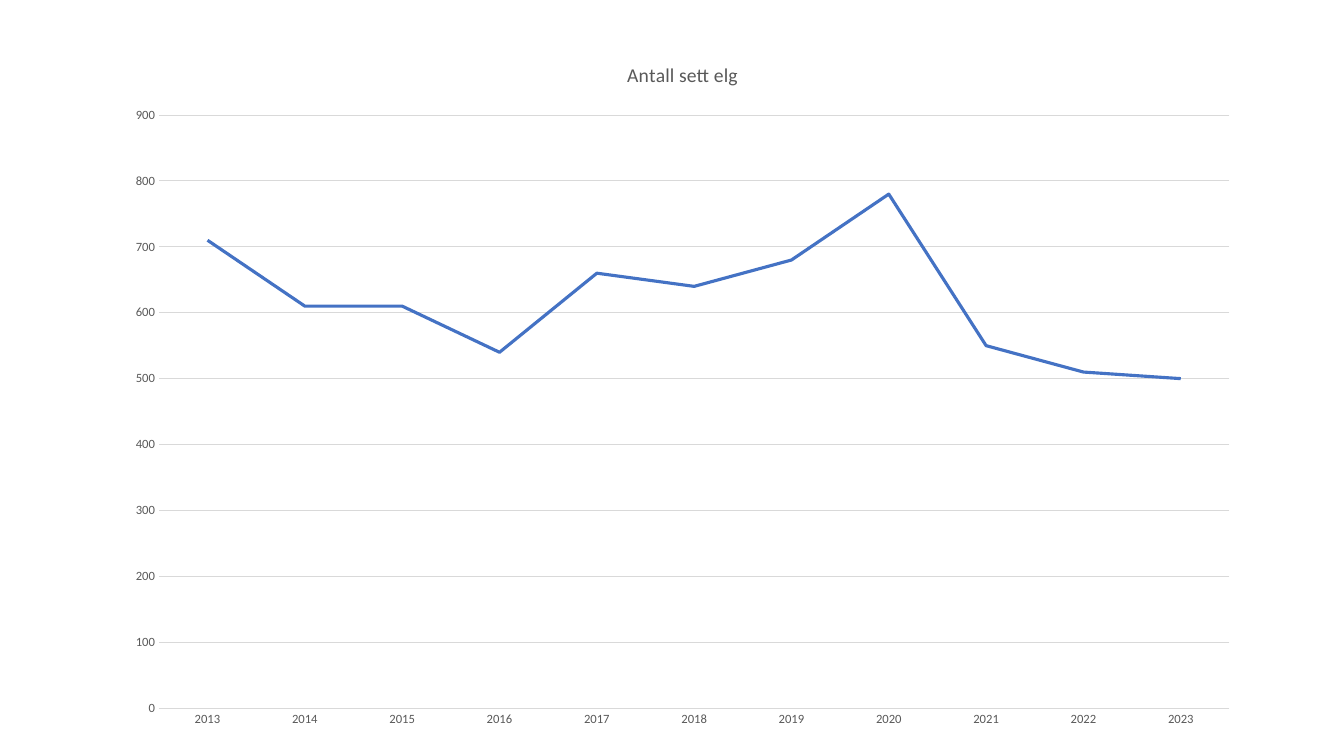
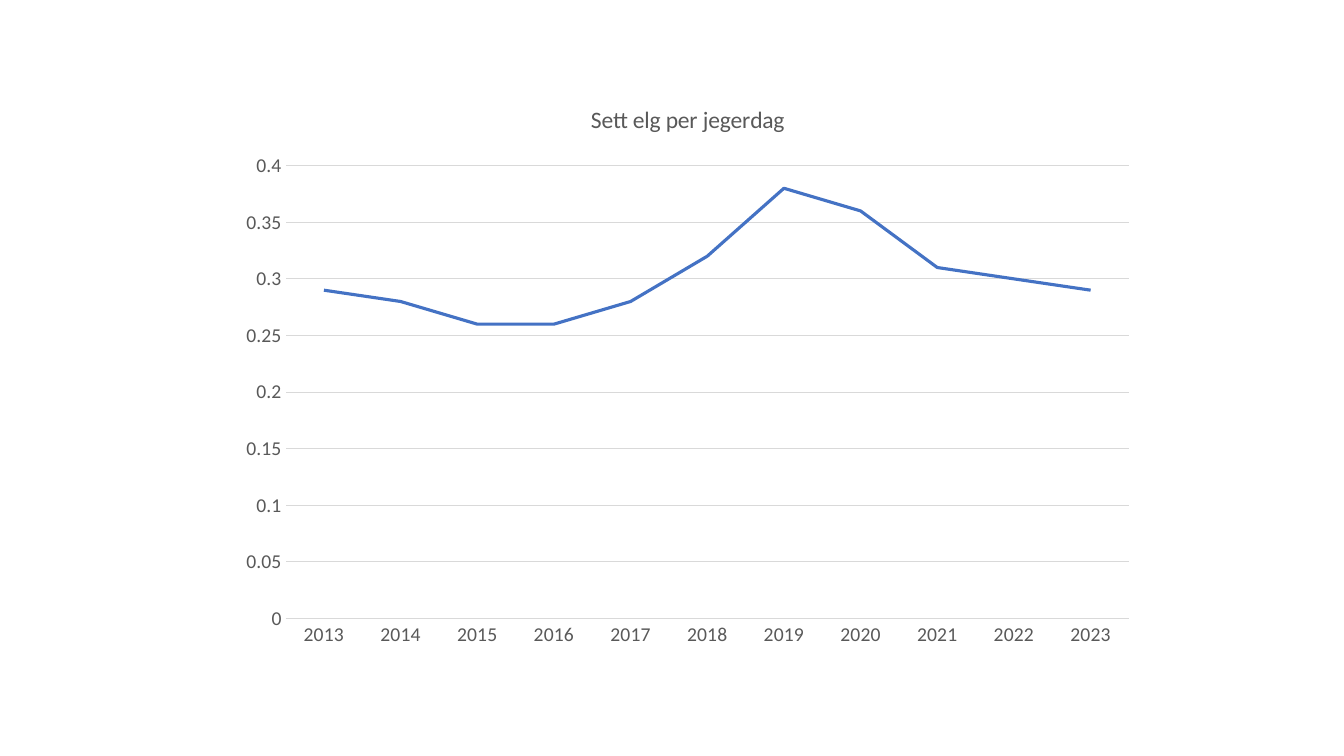
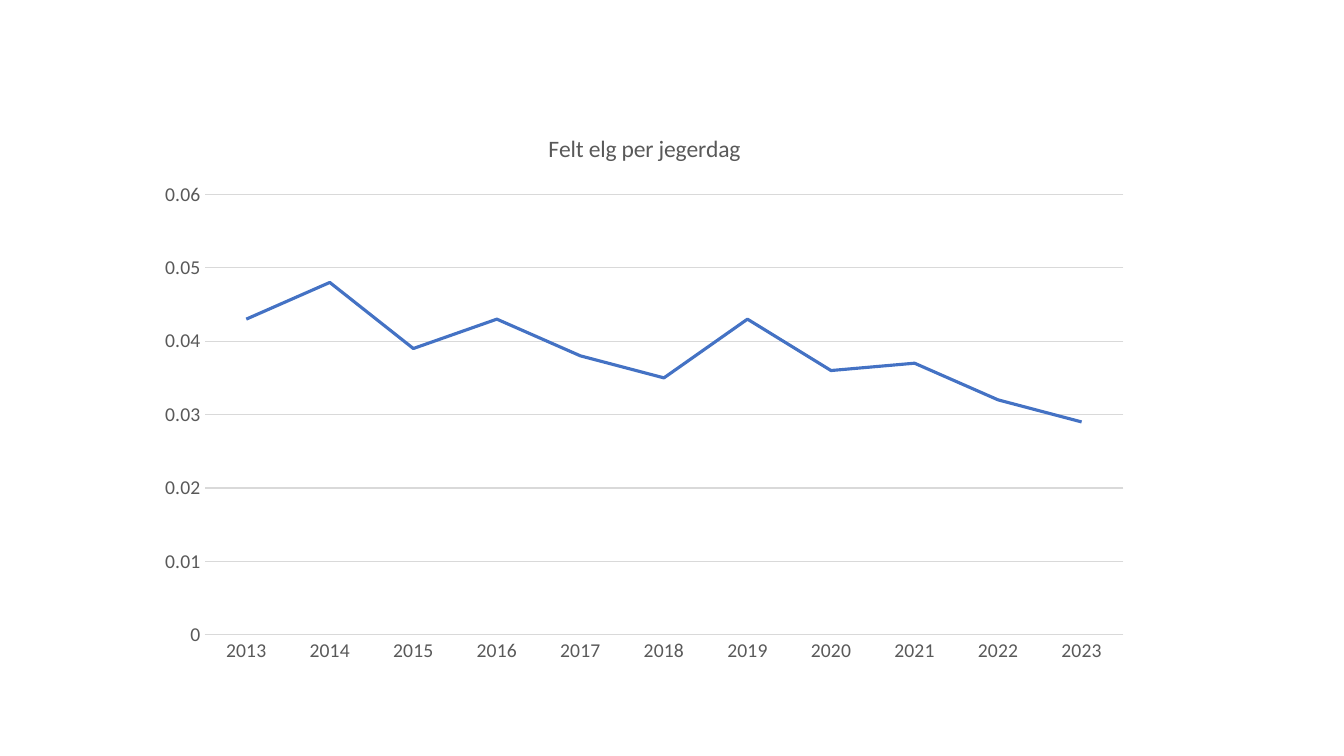
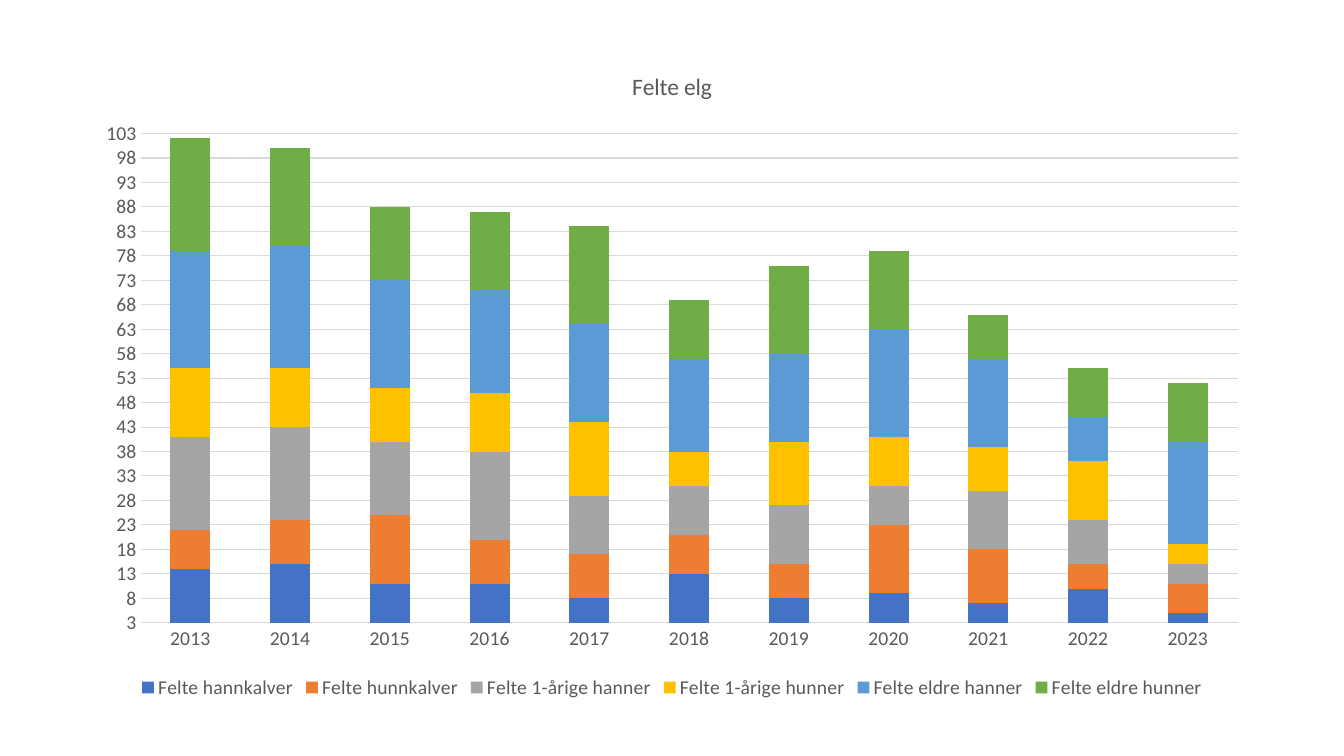
"""Build four slides of moose hunting charts."""
from pptx import Presentation
from pptx.chart.data import CategoryChartData
from pptx.dml.color import RGBColor
from pptx.enum.chart import XL_CHART_TYPE, XL_LEGEND_POSITION, XL_TICK_MARK
from pptx.util import Inches, Pt

LINE, STACKED = XL_CHART_TYPE.LINE, XL_CHART_TYPE.COLUMN_STACKED
BOTTOM, NO_TICK = XL_LEGEND_POSITION.BOTTOM, XL_TICK_MARK.NONE
FONT, GREY, RULE = "Calibri", "595959", "D9D9D9"
PALETTE = ["4472C4", "ED7D31", "A5A5A5", "FFC000", "5B9BD5", "70AD47"]
YEARS = [str(year) for year in range(2013, 2024)]

CHARTS = [
    {"title": "Antall sett elg", "kind": LINE, "box": (1.12, 0.38, 11.3, 6.97),
     "title_size": 14, "size": 9, "scale": (0, 900, 100),
     "series": {"Series 1": [710, 610, 610, 540, 660, 640, 680, 780, 550, 510, 500]}},
    {"title": "Sett elg per jegerdag", "kind": LINE, "box": (2.26, 0.82, 9.12, 5.71),
     "title_size": 16.8, "size": 14, "scale": (0, 0.4, 0.05),
     "series": {"Series 1": [0.29, 0.28, 0.26, 0.26, 0.28, 0.32,
                             0.38, 0.36, 0.31, 0.3, 0.29]}},
    {"title": "Felt elg per jegerdag", "kind": LINE, "box": (1.44, 1.11, 9.9, 5.58),
     "title_size": 16.8, "size": 14, "scale": (0, 0.06, 0.01),
     "series": {"Series 1": [0.043, 0.048, 0.039, 0.043, 0.038, 0.035,
                             0.043, 0.036, 0.037, 0.032, 0.029]}},
    {"title": "Felte elg", "kind": STACKED, "box": (0.82, 0.47, 11.69, 6.51),
     "title_size": 16.8, "size": 14, "scale": (3, 105, 5),
     "series": {
         "Felte hannkalver": [14, 15, 11, 11, 8, 13, 8, 9, 7, 10, 5],
         "Felte hunnkalver": [8, 9, 14, 9, 9, 8, 7, 14, 11, 5, 6],
         "Felte 1-årige hanner": [19, 19, 15, 18, 12, 10, 12, 8, 12, 9, 4],
         "Felte 1-årige hunner": [14, 12, 11, 12, 15, 7, 13, 10, 9, 12, 4],
         "Felte eldre hanner": [24, 25, 22, 21, 20, 19, 18, 22, 18, 9, 21],
         "Felte eldre hunner": [23, 20, 15, 16, 20, 12, 18, 16, 9, 10, 12]}},
]


def rgb(value):
    """Return the colour for a hex string."""
    return RGBColor.from_string(value)


def set_all(obj, **values):
    """Set each named attribute of an object."""
    for name, value in values.items():
        setattr(obj, name, value)


def style_font(font, size):
    """Apply the shared text style."""
    set_all(font, name=FONT, size=Pt(size), bold=False)
    font.color.rgb = rgb(GREY)


def style_line(line, color, width):
    """Apply a colour and a width in points to a line."""
    line.color.rgb = rgb(color)
    line.width = Pt(width)


def style_axes(chart, scale, size):
    """Style both axes and set the value scale."""
    cat, val = chart.category_axis, chart.value_axis
    for axis in (cat, val):
        set_all(axis, major_tick_mark=NO_TICK, minor_tick_mark=NO_TICK)
        style_font(axis.tick_labels.font, size)
    low, high, step = scale
    set_all(val, minimum_scale=low, maximum_scale=high, major_unit=step,
            has_major_gridlines=True)
    style_line(cat.format.line, RULE, 0.75)
    style_line(val.major_gridlines.format.line, RULE, 0.75)
    val.format.line.fill.background()


def style_series(chart, kind):
    """Colour the series as lines or stacked columns."""
    plot = chart.plots[0]
    plot.vary_by_categories = False
    if kind == STACKED:
        set_all(plot, gap_width=150, overlap=100)
    for series, color in zip(plot.series, PALETTE):
        if kind == LINE:
            series.smooth = False
            style_line(series.format.line, color, 2.25)
        else:
            series.format.fill.solid()
            series.format.fill.fore_color.rgb = rgb(color)


def add_chart(slide, item):
    """Add one titled chart to a slide."""
    data = CategoryChartData()
    data.categories = YEARS
    for name, values in item["series"].items():
        data.add_series(name, values)
    box = [Inches(length) for length in item["box"]]
    chart = slide.shapes.add_chart(item["kind"], *box, data).chart
    style_font(chart.font, item["size"])
    chart.has_title = True
    chart.chart_title.include_in_layout = False
    p = chart.chart_title.text_frame.paragraphs[0]
    r = p.add_run()
    r.text = item["title"]
    style_font(r.font, item["title_size"])
    style_axes(chart, item["scale"], item["size"])
    style_series(chart, item["kind"])
    chart.has_legend = len(item["series"]) > 1
    if chart.has_legend:
        set_all(chart.legend, position=BOTTOM, include_in_layout=False)
        style_font(chart.legend.font, item["size"])


def main():
    """Create and save the presentation."""
    prs = Presentation()
    set_all(prs, slide_width=Inches(13.33), slide_height=Inches(7.5))
    for item in CHARTS:
        add_chart(prs.slides.add_slide(prs.slide_layouts[6]), item)
    prs.save("out.pptx")


if __name__ == "__main__":
    main()
